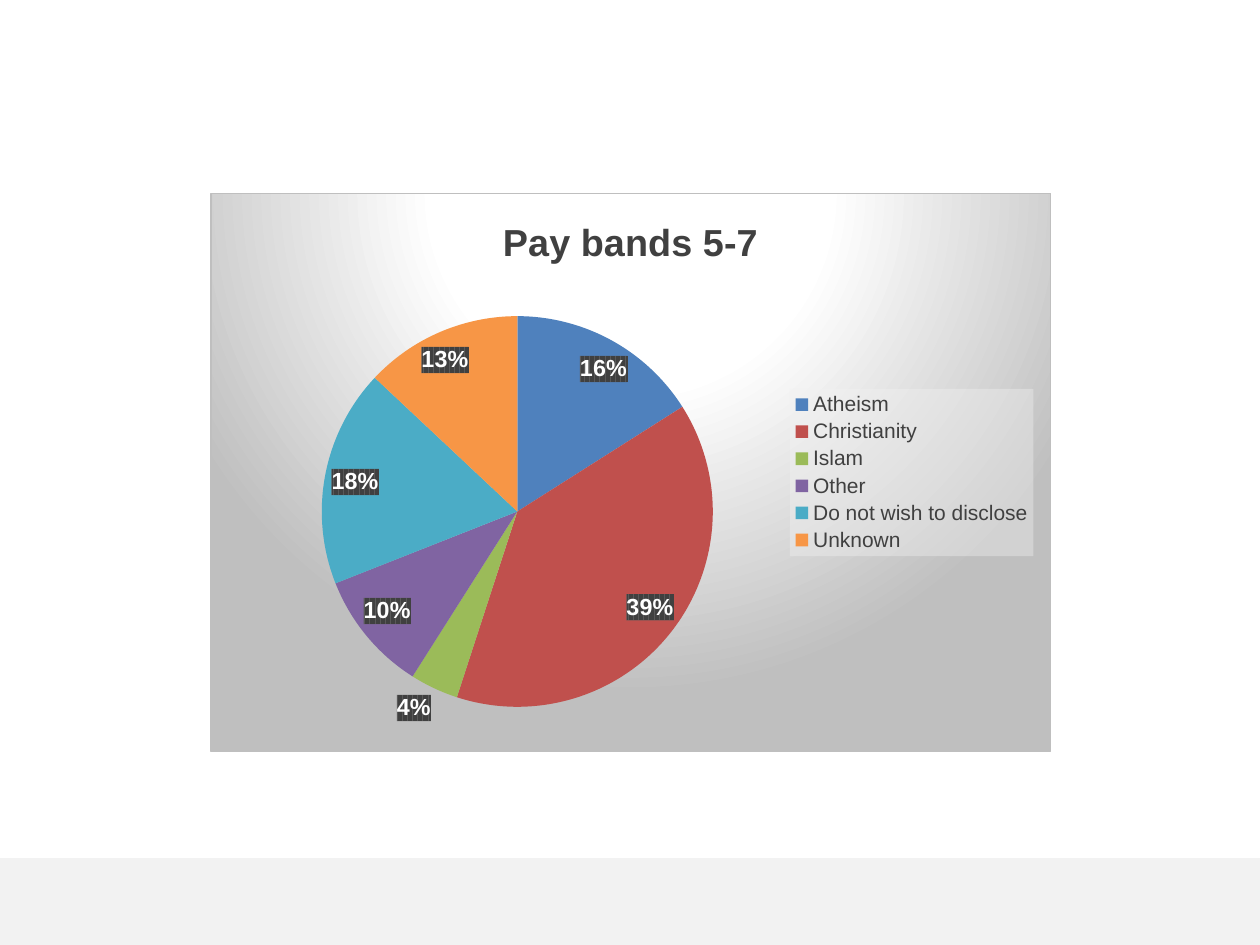
from dataclasses import dataclass

from lxml import etree
from pptx import Presentation
from pptx.chart.data import CategoryChartData
from pptx.dml.color import RGBColor
from pptx.enum import chart as ch, shapes
from pptx.oxml import parse_xml
from pptx.oxml.ns import nsdecls, qn
from pptx.util import Inches, Pt


@dataclass
class Slice:
    name: str
    percent: int
    color: str


SLICES = [
    Slice("Atheism", 16, "4F81BD"),
    Slice("Christianity", 39, "C0504D"),
    Slice("Islam", 4, "9BBB59"),
    Slice("Other", 10, "8064A2"),
    Slice("Do not wish to disclose", 18, "4BACC6"),
    Slice("Unknown", 13, "F79646"),
]


def rgb(color: str) -> RGBColor:
    return RGBColor.from_string(color)


def set_font(font, size: float, color: str, bold: bool = False) -> None:
    font.name, font.size, font.bold = "Arial", Pt(size), bold
    font.color.rgb = rgb(color)


def clr(color: str, inner: str = "") -> str:
    return f'<a:srgbClr val="{color}">{inner}</a:srgbClr>'


def sp_pr(content: str) -> etree._Element:
    """Chart shape properties around the given fill and line XML."""
    return parse_xml(f'<c:spPr {nsdecls("c", "a")}>{content}</c:spPr>')


def layout(x: float, y: float, w: float, h: float, inner: bool = False) -> etree._Element:
    """Manual layout in fractions of the chart area."""
    target = '<c:layoutTarget val="inner"/>' if inner else ""
    sizes = "".join(f'<c:{k} val="{v}"/>' for k, v in zip("xywh", (x, y, w, h)))
    return parse_xml(
        f'<c:layout {nsdecls("c")}><c:manualLayout>{target}'
        f'<c:xMode val="edge"/><c:yMode val="edge"/>{sizes}'
        "</c:manualLayout></c:layout>")


def add_footer_band(slide) -> None:
    sp = slide.shapes.add_shape(shapes.MSO_SHAPE.RECTANGLE, Inches(0), Inches(6.81),
                                Inches(10), Inches(0.69))
    sp.shadow.inherit = False
    sp.fill.solid()
    sp.fill.fore_color.rgb = rgb("F2F2F2")
    sp.line.fill.background()


def add_pie(slide, slices: list[Slice]):
    data = CategoryChartData(number_format="General")
    data.categories = [s.name for s in slices]
    data.add_series("Series 1", [s.percent for s in slices])
    chart = slide.shapes.add_chart(ch.XL_CHART_TYPE.PIE, Inches(1.67), Inches(1.53),
                                   Inches(6.67), Inches(4.44), data).chart
    set_font(chart.font, 10, "000000")

    chart.has_title = True
    tf = chart.chart_title.text_frame
    tf.text = "Pay bands 5-7"
    set_font(tf.paragraphs[0].runs[0].font, 21.6, "404040", bold=True)
    chart.chart_title.include_in_layout = False

    chart.has_legend = True
    chart.legend.position = ch.XL_LEGEND_POSITION.RIGHT
    chart.legend.include_in_layout = False
    set_font(chart.legend.font, 12, "404040")

    plot = chart.plots[0]
    plot.vary_by_categories = True
    for i, s in enumerate(slices):
        fill = plot.series[0].points[i].format.fill
        fill.solid()
        fill.fore_color.rgb = rgb(s.color)

    labels = plot.series[0].data_labels
    labels.show_percentage = True
    labels.show_value = False
    labels.number_format = "0%"
    labels.number_format_is_linked = False
    labels.position = ch.XL_LABEL_POSITION.BEST_FIT
    set_font(labels.font, 13.3, "FFFFFF", bold=True)
    return chart


def style_backgrounds(chart) -> None:
    """Fill the chart area, the legend and the labels, and place the plot."""
    root = chart.element
    area = root.find(qn("c:chart"))
    area.addprevious(parse_xml(f'<c:roundedCorners {nsdecls("c")} val="0"/>'))
    stops = "".join(f'<a:gs pos="{pos}000">{clr(color)}</a:gs>'
                    for pos, color in ((0, "FFFFFF"), (39, "FFFFFF"), (100, "BFBFBF")))
    area.addnext(sp_pr(
        f'<a:gradFill><a:gsLst>{stops}</a:gsLst><a:path path="circle">'
        '<a:fillToRect l="50000" t="-80000" r="50000" b="180000"/></a:path></a:gradFill>'
        f'<a:ln w="9525"><a:solidFill>{clr("BFBFBF")}</a:solidFill></a:ln>'))

    plot_area = area.find(qn("c:plotArea"))
    for old in plot_area.findall(qn("c:layout")):
        plot_area.remove(old)
    plot_area.insert(0, layout(0.13, 0.22, 0.47, 0.7, inner=True))

    legend = area.find(qn("c:legend"))
    for old in legend.findall(qn("c:layout")):
        legend.remove(old)
    legend.find(qn("c:legendPos")).addnext(layout(0.69, 0.35, 0.29, 0.3))
    tint = clr("F2F2F2", '<a:alpha val="39000"/>')
    legend.find(qn("c:txPr")).addprevious(sp_pr(f"<a:solidFill>{tint}</a:solidFill>"))

    labels = next(root.iter(qn("c:dLbls")))
    labels.find(qn("c:txPr")).addprevious(sp_pr(
        f'<a:pattFill prst="dkVert"><a:fgClr>{clr("404040")}</a:fgClr>'
        f'<a:bgClr>{clr("595959")}</a:bgClr></a:pattFill>'))


def main() -> None:
    prs = Presentation()
    prs.slide_width, prs.slide_height = Inches(10), Inches(7.5)
    s = prs.slides.add_slide(prs.slide_layouts[6])
    add_footer_band(s)
    style_backgrounds(add_pie(s, SLICES))
    prs.save("out.pptx")


if __name__ == "__main__":
    main()
